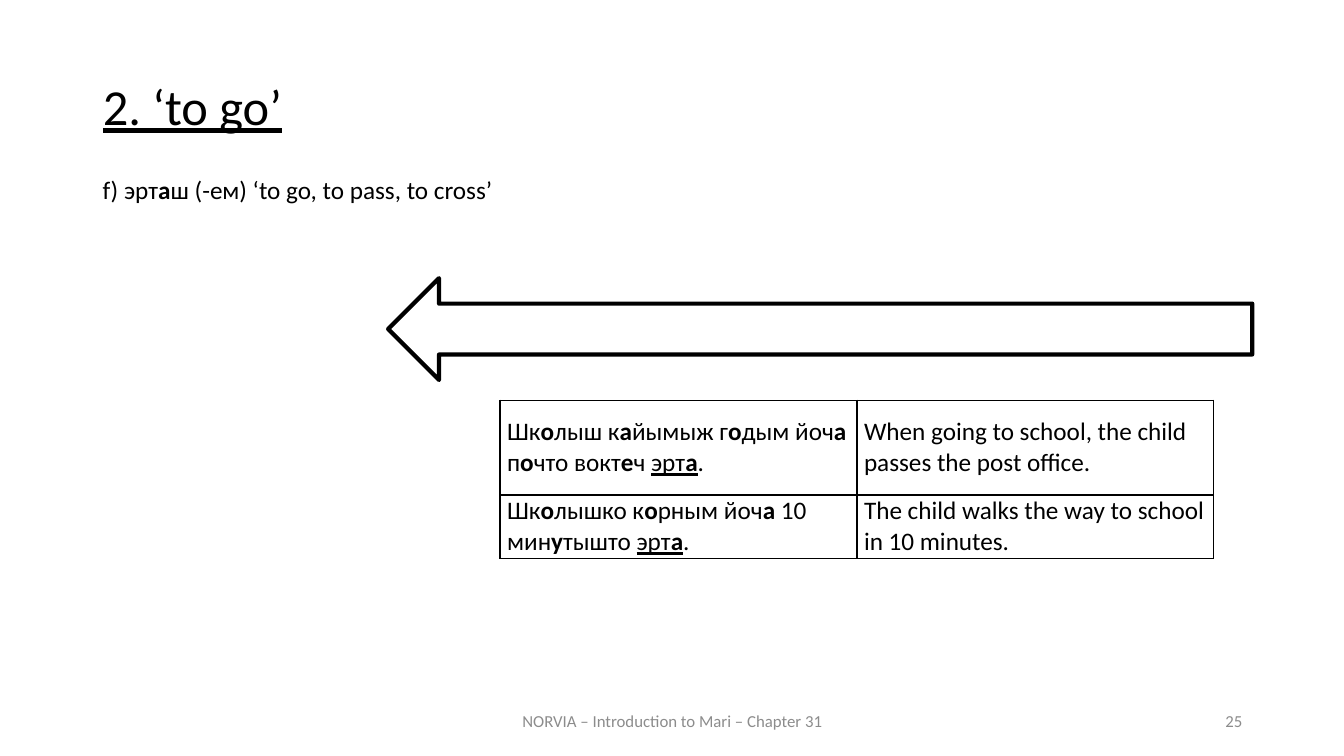
"""Build the Mari vocabulary slide on the verb 'to go'."""
import itertools

import lxml.etree
import pptx
import pptx.dml.color
import pptx.enum.shapes
import pptx.enum.text
import pptx.oxml.ns
import pptx.util

Inches, Pt = pptx.util.Inches, pptx.util.Pt
RGBColor = pptx.dml.color.RGBColor
ALIGN = pptx.enum.text.PP_ALIGN
ANCHOR = pptx.enum.text.MSO_ANCHOR
qn = pptx.oxml.ns.qn

TITLE = "2. ‘to go’"
ENTRY = "f) эрт*а*ш (-ем) ‘to go, to pass, to cross’"
EXAMPLES = [
    ("Шк*о*лыш к*а*йымыж г*о*дым йоч*а* п*о*что вокт*е*ч _эрт*а*_.",
     "When going to school, the child passes the post office."),
    ("Шк*о*лышко к*о*рным йоч*а* 10 мин*у*тышто _эрт*а*_.",
     "The child walks the way to school in 10 minutes."),
]
FOOTER = "NORVIA – Introduction to Mari – Chapter 31"
PAGE = "25"

FONT = "Calibri"
BLACK = RGBColor(0x00, 0x00, 0x00)
GRAY = RGBColor(0x8C, 0x8C, 0x8C)
COL_WIDTH = 3.54
ROW_HEIGHTS = [0.94, 0.63]


def write(tf, text, size, color=BLACK, align=ALIGN.LEFT, anchor=ANCHOR.TOP):
    """Write one paragraph; * switches bold and _ switches underline."""
    tf.word_wrap = True
    tf.vertical_anchor = anchor
    p = tf.paragraphs[0]
    p.alignment = align
    p.font.name, p.font.size = FONT, Pt(size)
    p.font.color.rgb = color
    underlined = False
    for i, bold_part in enumerate(text.split("*")):
        for j, part in enumerate(bold_part.split("_")):
            if j:
                underlined = not underlined
            if part:
                r = p.add_run()
                r.text = part
                r.font.bold = i % 2 == 1
                r.font.underline = underlined
    return p


def add_text(s, box, text, size, **style):
    """Add a text box with one paragraph."""
    tb = s.shapes.add_textbox(*map(Inches, box))
    write(tb.text_frame, text, size, **style)


def add_borders(cell):
    """Draw a thin black line on every side of a cell."""
    tcPr = cell._tc.get_or_add_tcPr()
    for i, side in enumerate(("lnL", "lnR", "lnT", "lnB")):
        ln = lxml.etree.Element(qn("a:" + side), w=str(Pt(1)))
        fill = lxml.etree.SubElement(ln, qn("a:solidFill"))
        lxml.etree.SubElement(fill, qn("a:srgbClr"), val=str(BLACK))
        tcPr.insert(i, ln)


def add_examples(s):
    """Add the table of example sentences and translations."""
    table = s.shapes.add_table(
        len(EXAMPLES), 2, Inches(4.96), Inches(3.97),
        Inches(2 * COL_WIDTH), Inches(sum(ROW_HEIGHTS))).table
    table.first_row = table.horz_banding = False
    for col in table.columns:
        col.width = Inches(COL_WIDTH)
    for row, height in zip(table.rows, ROW_HEIGHTS):
        row.height = Inches(height)
    for cell, text in zip(table.iter_cells(), itertools.chain(*EXAMPLES)):
        cell.fill.background()
        cell.margin_left = cell.margin_right = Inches(0.07)
        cell.margin_top = cell.margin_bottom = 0
        cell.vertical_anchor = ANCHOR.MIDDLE
        write(cell.text_frame, text, 18, anchor=ANCHOR.MIDDLE)
        add_borders(cell)


def main():
    """Build and save the slide."""
    prs = pptx.Presentation()
    prs.slide_width, prs.slide_height = Inches(13.33), Inches(7.5)
    s = prs.slides.add_slide(prs.slide_layouts[5])

    title = s.shapes.title
    title.left, title.top = Inches(0.92), Inches(0.76)
    title.width, title.height = Inches(11.5), Inches(0.83)
    title.text_frame.auto_size = pptx.enum.text.MSO_AUTO_SIZE.NONE
    p = write(title.text_frame, f"_{TITLE}_", 36)
    p.line_spacing = 0.9

    add_text(s, (0.92, 1.68, 5.17, 0.4), ENTRY, 18)
    add_text(s, (4.42, 6.95, 4.5, 0.4), FOOTER, 12, color=GRAY,
             align=ALIGN.CENTER, anchor=ANCHOR.MIDDLE)
    add_text(s, (9.42, 6.95, 3, 0.4), PAGE, 12, color=GRAY,
             align=ALIGN.RIGHT, anchor=ANCHOR.MIDDLE)
    add_examples(s)

    arrow = s.shapes.add_shape(
        pptx.enum.shapes.MSO_SHAPE.LEFT_ARROW,
        Inches(3.85), Inches(2.76), Inches(8.57), Inches(1.01))
    arrow.shadow.inherit = False
    arrow.fill.background()
    arrow.line.color.rgb = BLACK
    arrow.line.width = Pt(3)

    prs.save("out.pptx")


if __name__ == "__main__":
    main()
